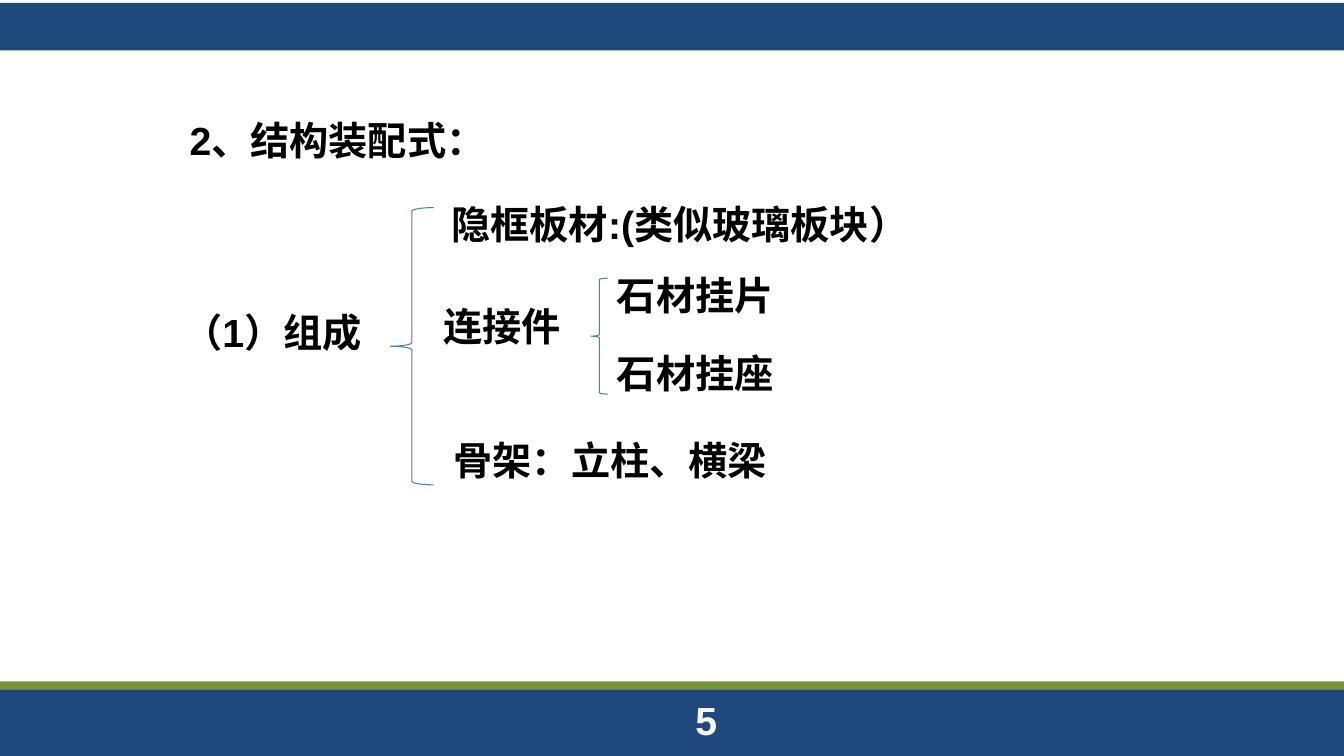
from dataclasses import dataclass

from pptx import Presentation
from pptx.dml.color import RGBColor as RGB
from pptx.enum.shapes import MSO_SHAPE as SHAPE
from pptx.enum.text import MSO_ANCHOR as ANCHOR, MSO_AUTO_SIZE as FIT, PP_ALIGN as ALIGN
from pptx.util import Inches, Pt

WIDTH, HEIGHT = 13.33, 7.5
TITLE = ("2、结构装配式：", (1.78, 1.1, 3.66, 0.96))
LABELS = [
    ("（1）组成", (1.72, 3.01, 3.39, 0.96)),
    ("隐框板材:(类似玻璃板块）", (4.38, 1.94, 5.62, 0.96)),
    ("连接件", (4.3, 2.95, 2.23, 0.96)),
    ("骨架：立柱、横梁", (4.4, 4.28, 4.02, 0.96)),
    ("石材挂片", (6.02, 2.64, 2.23, 0.96)),
    ("石材挂座", (6.02, 3.42, 2.23, 0.96)),
]
PAGE = ("5", (6.79, 6.86, 0.43, 0.57))
BRACES = [(3.87, 2.06, 0.43, 2.75), (5.86, 2.76, 0.17, 1.15)]
HEADER_TOP, HEADER_BOTTOM = 0.03, 0.5
STRIPE_TOP, FOOTER_TOP = 6.76, 6.84


@dataclass(frozen=True)
class Theme:
    navy: RGB = RGB(0x1F, 0x49, 0x7D)
    green: RGB = RGB(0x77, 0x93, 0x3C)
    brace: RGB = RGB(0x4B, 0x7E, 0xBC)
    ink: RGB = RGB(0, 0, 0)
    page: RGB = RGB(0xF4, 0xF6, 0xF8)
    font: str = "Arial"
    size: int = 28
    brace_line: float = 0.75


THEME = Theme()


def add_band(s, top, bottom, color):
    """Add a filled band across the slide."""
    sp = s.shapes.add_shape(SHAPE.RECTANGLE, 0, Inches(top), Inches(WIDTH), Inches(bottom - top))
    sp.shadow.inherit = False
    sp.fill.solid()
    sp.fill.fore_color.rgb = color
    sp.line.fill.background()


def add_brace(s, box):
    """Add an unfilled left brace."""
    sp = s.shapes.add_shape(SHAPE.LEFT_BRACE, *map(Inches, box))
    sp.shadow.inherit = False
    sp.fill.background()
    sp.line.color.rgb = THEME.brace
    sp.line.width = Pt(THEME.brace_line)


def write(sp, text, color=THEME.ink, align=ALIGN.LEFT, wrap=True):
    """Write one bold line into a shape."""
    tf = sp.text_frame
    tf.word_wrap = wrap
    tf.auto_size = FIT.NONE
    tf.vertical_anchor = ANCHOR.TOP
    p = tf.paragraphs[0]
    p.alignment = align
    r = p.add_run()
    r.text = text
    r.font.name = THEME.font
    r.font.size = Pt(THEME.size)
    r.font.bold = True
    r.font.color.rgb = color


def main():
    """Build and save the slide."""
    prs = Presentation()
    prs.slide_width, prs.slide_height = Inches(WIDTH), Inches(HEIGHT)
    s = prs.slides.add_slide(prs.slide_layouts[5])

    add_band(s, HEADER_TOP, HEADER_BOTTOM, THEME.navy)
    add_band(s, STRIPE_TOP, FOOTER_TOP, THEME.green)
    add_band(s, FOOTER_TOP, HEIGHT, THEME.navy)

    text, box = TITLE
    title = s.shapes.title
    title.left, title.top, title.width, title.height = map(Inches, box)
    write(title, text)

    for text, box in LABELS:
        write(s.shapes.add_textbox(*map(Inches, box)), text)
    for box in BRACES:
        add_brace(s, box)

    text, box = PAGE
    write(s.shapes.add_textbox(*map(Inches, box)), text, THEME.page, ALIGN.CENTER, False)
    prs.save("out.pptx")


if __name__ == "__main__":
    main()
